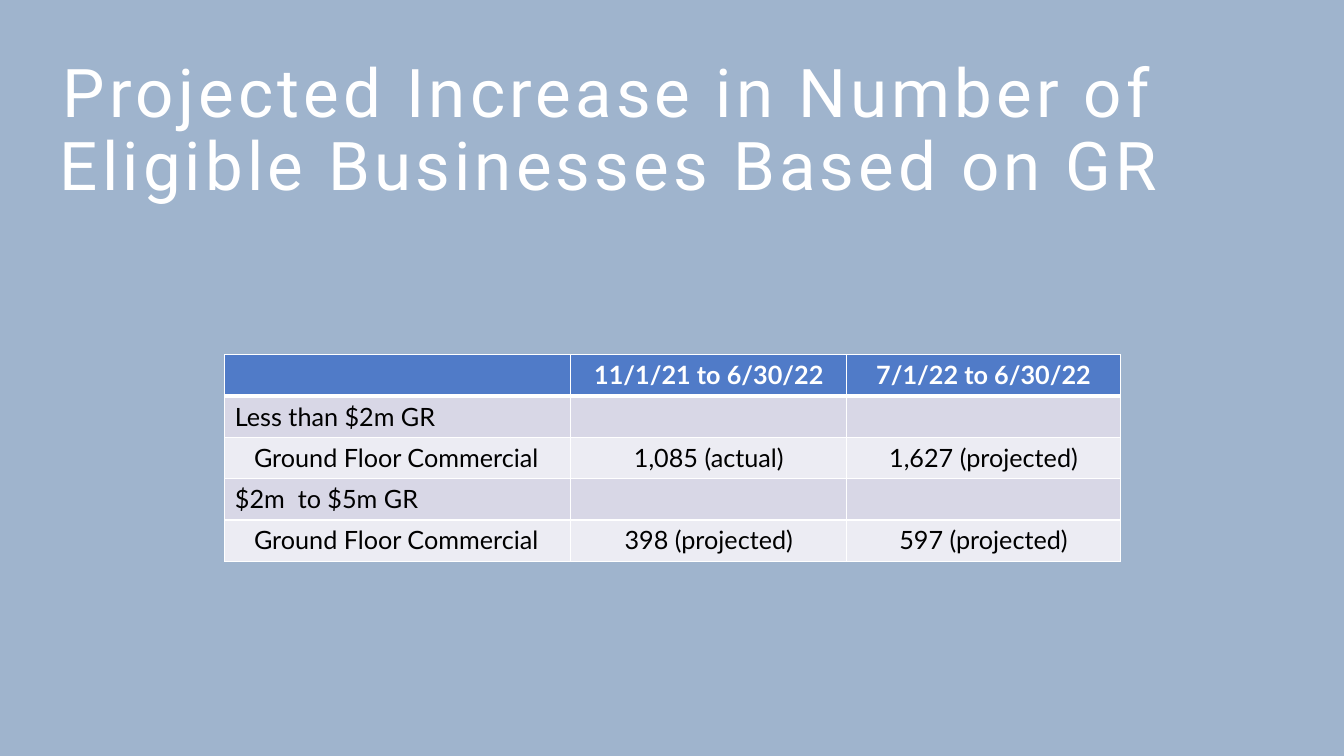
from lxml.etree import SubElement
from pptx import Presentation
from pptx.dml.color import RGBColor
from pptx.enum.text import MSO_ANCHOR, MSO_AUTO_SIZE, PP_ALIGN
from pptx.oxml.ns import qn
from pptx.util import Inches, Pt

# Content
TITLE = "Projected Increase in Number of Eligible Businesses Based on GR"
HEADER = ("", "11/1/21 to 6/30/22", "7/1/22 to 6/30/22")
GROUPS = [
    ("Less than $2m GR", ("Ground Floor Commercial", "1,085 (actual)", "1,627 (projected)")),
    ("$2m  to $5m GR", ("Ground Floor Commercial", "398 (projected)", "597 (projected)")),
]

# Theme and layout, lengths in inches
THEME = dict(
    background="9FB4CD", header="507BC8", group="D8D7E6", detail="ECECF3",
    light="FFFFFF", dark="000000",
    title_font="Roboto", title_size=48, title_spacing=3,
    table_font="Lato", table_size=18, border=1, header_border=3,
)
TITLE_BOX = (0.46, 0.54, 11.17, 1.6)
TABLE_LEFT, TABLE_TOP = 2.23, 3.52
COLUMNS, ROW_HEIGHT = (3.43, 2.74, 2.71), 0.41
DETAIL_INDENT = 0.19


def color(name):
    return RGBColor.from_string(THEME[name])


def set_borders(cell, bottom):
    for side in ("lnL", "lnR", "lnT", "lnB"):
        width = bottom if side == "lnB" else THEME["border"]
        ln = SubElement(cell._tc.get_or_add_tcPr(), qn(f"a:{side}"), w=str(Pt(width)))
        SubElement(SubElement(ln, qn("a:solidFill")), qn("a:srgbClr"), val=THEME["light"])


def fill_cell(cell, text, kind, column):
    is_header = kind == "header"
    set_borders(cell, THEME["header_border" if is_header else "border"])
    cell.fill.solid()
    cell.fill.fore_color.rgb = color(kind)
    cell.text_frame.text = text
    p = cell.text_frame.paragraphs[0]
    p.alignment = PP_ALIGN.CENTER if column else PP_ALIGN.LEFT
    if kind == "detail" and column == 0:
        cell.margin_left = Inches(0.1 + DETAIL_INDENT)
    p.font.name, p.font.size = THEME["table_font"], Pt(THEME["table_size"])
    for r in p.runs:
        r.font.name, r.font.size = THEME["table_font"], Pt(THEME["table_size"])
        r.font.bold = is_header
        r.font.color.rgb = color("light" if is_header else "dark")


prs = Presentation()
prs.slide_width, prs.slide_height = Inches(13.33), Inches(7.5)
s = prs.slides.add_slide(prs.slide_layouts[5])
s.background.fill.solid()
s.background.fill.fore_color.rgb = color("background")

# Title
title = s.shapes.title
title.left, title.top, title.width, title.height = map(Inches, TITLE_BOX)
tf = title.text_frame
tf.text = TITLE
tf.word_wrap, tf.auto_size = True, MSO_AUTO_SIZE.NONE
tf.vertical_anchor = MSO_ANCHOR.TOP
p = tf.paragraphs[0]
p.alignment, p.line_spacing = PP_ALIGN.CENTER, 0.9
r = p.runs[0]
r.font.name, r.font.size = THEME["title_font"], Pt(THEME["title_size"])
r.font.color.rgb = color("light")
r.font._element.set("spc", str(THEME["title_spacing"] * 100))

# Table: a header, then a group row and a detail row for each group
rows = [("header", HEADER)]
for group, detail in GROUPS:
    rows += [("group", (group, "", "")), ("detail", detail)]

table = s.shapes.add_table(
    len(rows), len(COLUMNS), Inches(TABLE_LEFT), Inches(TABLE_TOP),
    Inches(sum(COLUMNS)), Inches(ROW_HEIGHT * len(rows))).table
for column, width in zip(table.columns, COLUMNS):
    column.width = Inches(width)
for i, (kind, texts) in enumerate(rows):
    table.rows[i].height = Inches(ROW_HEIGHT)
    for j, text in enumerate(texts):
        fill_cell(table.cell(i, j), text, kind, j)

prs.save("out.pptx")
